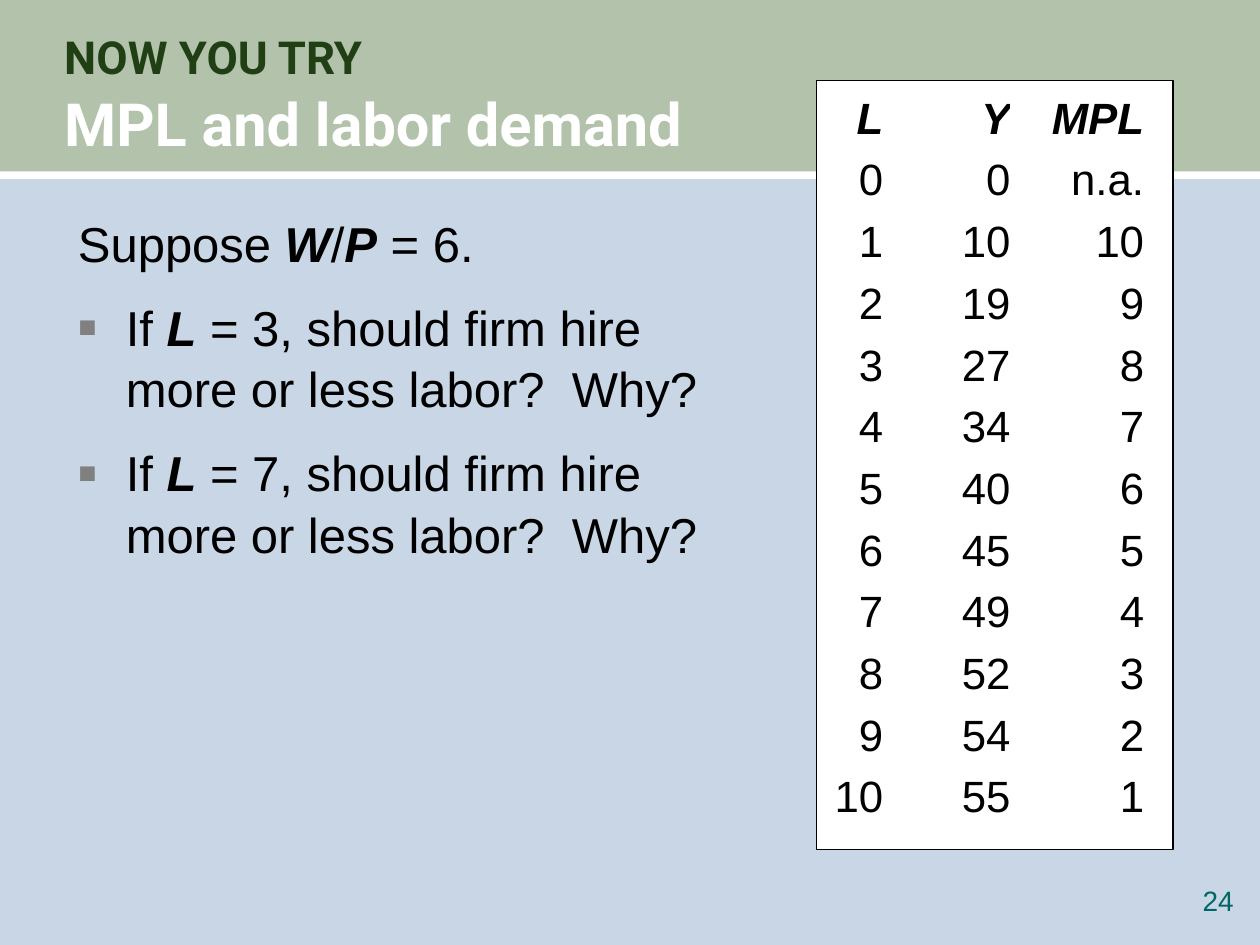
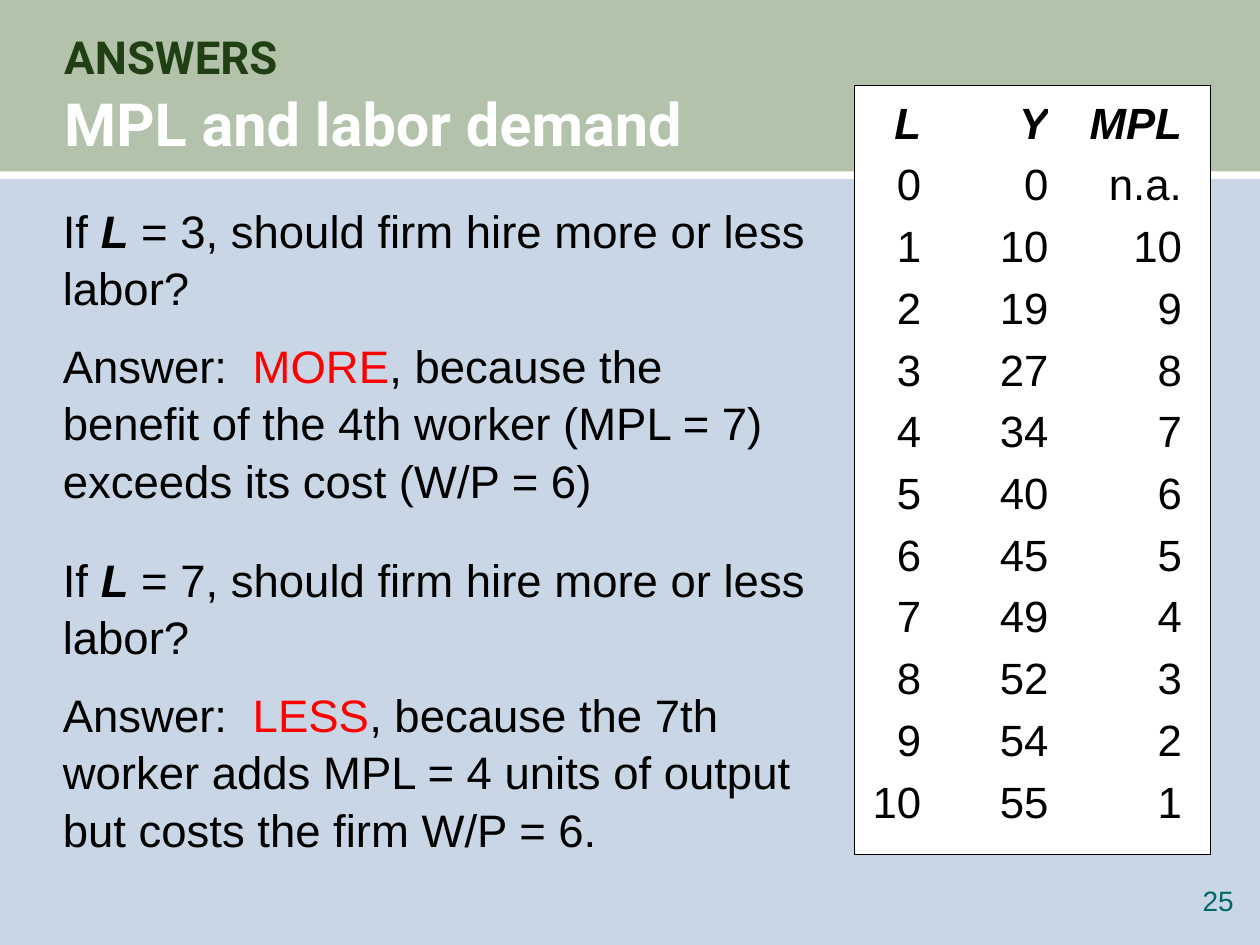
from dataclasses import dataclass

from lxml import etree
from pptx import Presentation
from pptx.dml.color import RGBColor
from pptx.enum.shapes import MSO_SHAPE
from pptx.enum.text import MSO_ANCHOR, PP_ALIGN
from pptx.oxml.ns import qn
from pptx.util import Inches, Pt

RECTANGLE = MSO_SHAPE.RECTANGLE
MIDDLE, TOP = MSO_ANCHOR.MIDDLE, MSO_ANCHOR.TOP
LEFT, RIGHT = PP_ALIGN.LEFT, PP_ALIGN.RIGHT
BLANK_LAYOUT = 6


@dataclass(frozen=True)
class Theme:
    background: str = "C9D6E5"
    band: str = "B3C2AA"
    white: str = "FFFFFF"
    text: str = "000000"
    kicker: str = "203F15"
    bullet: str = "808080"
    number: str = "006666"
    answer: str = "FF0000"
    title_font: str = "Roboto"
    body_font: str = "Arial"
    kicker_size: int = 26
    title_size: int = 34
    question_size: int = 28
    answer_size: int = 26
    table_size: int = 25
    number_size: int = 16
    line_spacing: float = 1.05
    paragraph_gap: float = 0.45  # share of the type size


THEME = Theme()

OUTPUT = [0, 10, 19, 27, 34, 40, 45, 49, 52, 54, 55]
MARGINAL = ["n.a."] + [after - before for before, after in zip(OUTPUT, OUTPUT[1:])]
LABOR_ROWS = [("L", "Y", "MPL"), *zip(range(len(OUTPUT)), OUTPUT, MARGINAL)]


def color(value):
    return RGBColor.from_string(value)


def add_span(para, text, size, font=THEME.body_font, fill=THEME.text,
             bold=False, italic=False):
    span = para.add_run()
    span.text = text
    span.font.name = font
    span.font.size = Pt(size)
    span.font.color.rgb = color(fill)
    span.font.bold = bold
    span.font.italic = italic


def symbol(text):
    """A span for a variable: bold italic."""
    return text, {"bold": True, "italic": True}


def plain(text, **style):
    return text, style


def add_bullet(para):
    """Give the paragraph a grey square and a hanging indent."""
    properties = para._p.get_or_add_pPr()
    indent = Inches(0.38)
    properties.set("marL", str(indent))
    properties.set("indent", str(-indent))
    tint = etree.SubElement(properties, qn("a:buClr"))
    etree.SubElement(tint, qn("a:srgbClr"), val=THEME.bullet)
    etree.SubElement(properties, qn("a:buSzPct"), val="120000")
    etree.SubElement(properties, qn("a:buFont"), typeface=THEME.body_font)
    etree.SubElement(properties, qn("a:buChar"), char="▪")


class LectureDeck:
    def __init__(self, theme):
        self.theme = theme
        self.deck = Presentation()
        self.deck.slide_width = Inches(10)
        self.deck.slide_height = Inches(7.5)
        self.page = None

    def add_page(self, kicker, title, number):
        """Start a slide with its band, two-line title and number."""
        theme = self.theme
        self.page = self.deck.slides.add_slide(self.deck.slide_layouts[BLANK_LAYOUT])
        self.page.background.fill.solid()
        self.page.background.fill.fore_color.rgb = color(theme.background)
        self.rectangle(0, -0.01, 10, 1.41, theme.band)
        self.rectangle(0, 1.36, 10, 0.06, theme.white)

        frame = self.text_frame(0.51, 0.22, 9.02, 1.03, inset=False, anchor=MIDDLE)
        para = frame.paragraphs[0]
        para.line_spacing = theme.line_spacing
        heading = {"font": theme.title_font, "bold": True}
        add_span(para, kicker, theme.kicker_size, fill=theme.kicker, **heading)
        para.add_line_break()
        add_span(para, title, theme.title_size, fill=theme.white, **heading)

        para = self.text_frame(9.24, 7.01, 0.55, 0.32, inset=False).paragraphs[0]
        para.alignment = RIGHT
        add_span(para, str(number), theme.number_size, fill=theme.number)

    def rectangle(self, left, top, width, height, fill, line=None):
        box = self.page.shapes.add_shape(
            RECTANGLE, Inches(left), Inches(top), Inches(width), Inches(height))
        box.shadow.inherit = False
        box.fill.solid()
        box.fill.fore_color.rgb = color(fill)
        if line:
            box.line.color.rgb = color(line)
            box.line.width = Pt(0.75)
        else:
            box.line.fill.background()

    def text_frame(self, left, top, width, height, inset=True, anchor=TOP):
        box = self.page.shapes.add_textbox(
            Inches(left), Inches(top), Inches(width), Inches(height))
        frame = box.text_frame
        frame.word_wrap = True
        frame.vertical_anchor = anchor
        if not inset:
            frame.margin_left = frame.margin_right = 0
            frame.margin_top = frame.margin_bottom = 0
        return frame

    def body(self, left, top, width, height, paragraphs, size, bulleted=(), gaps=None):
        """Write lists of spans; gaps maps a paragraph index to its own space before."""
        frame = self.text_frame(left, top, width, height)
        for index, spans in enumerate(paragraphs):
            para = frame.add_paragraph() if index else frame.paragraphs[0]
            para.alignment = LEFT
            para.line_spacing = self.theme.line_spacing
            usual_gap = size * self.theme.paragraph_gap
            para.space_before = Pt((gaps or {}).get(index, usual_gap))
            if index in bulleted:
                add_bullet(para)
            for text, style in spans:
                add_span(para, text, size, **style)

    def labor_table(self, left, top):
        """Draw the production schedule on a framed white panel."""
        theme = self.theme
        self.rectangle(left, top, 2.83, 6.1, theme.white, theme.text)
        widths, row_height = (0.48, 1.01, 1.06), 0.49
        table = self.page.shapes.add_table(
            len(LABOR_ROWS), len(widths), Inches(left + 0.05), Inches(top + 0.06),
            Inches(sum(widths)), Inches(row_height * len(LABOR_ROWS))).table
        table.first_row = table.horz_banding = False
        for column, width in zip(table.columns, widths):
            column.width = Inches(width)
        for row_index, values in enumerate(LABOR_ROWS):
            header = row_index == 0
            for column_index, value in enumerate(values):
                cell = table.cell(row_index, column_index)
                cell.fill.solid()
                cell.fill.fore_color.rgb = color(theme.white)
                cell.margin_left = cell.margin_right = 0
                cell.margin_top = cell.margin_bottom = 0
                cell.vertical_anchor = MIDDLE
                para = cell.text_frame.paragraphs[0]
                para.alignment = RIGHT
                add_span(para, str(value), theme.table_size, bold=header, italic=header)


def labor_question(level, ending=""):
    return [plain("If "), symbol("L"),
            plain(f" = {level}, should firm hire more or less labor?{ending}")]


def labor_answer(verdict, reason):
    return [plain("Answer:  "), plain(verdict, fill=THEME.answer),
            plain(f", because the {reason}")]


def main():
    lecture = LectureDeck(THEME)
    title = "MPL and labor demand"

    lecture.add_page("NOW YOU TRY", title, 24)
    premise = [plain("Suppose "), symbol("W"), plain("/"), symbol("P"), plain(" = 6.")]
    questions = [labor_question(level, "  Why?") for level in (3, 7)]
    lecture.body(0.52, 1.62, 5.62, 5.08, [premise, *questions],
                 THEME.question_size, bulleted=(1, 2))
    lecture.labor_table(6.48, 0.64)

    lecture.add_page("ANSWERS", title, 25)
    answers = [
        labor_question(3),
        labor_answer("MORE", "benefit of the 4th worker (MPL = 7) "
                             "exceeds its cost (W/P = 6)"),
        labor_question(7),
        labor_answer("LESS", "7th worker adds MPL = 4 units of output "
                             "but costs the firm W/P = 6."),
    ]
    lecture.body(0.4, 1.54, 6.11, 5.76, answers, THEME.answer_size, gaps={2: 24})
    lecture.labor_table(6.78, 0.68)

    lecture.deck.save("out.pptx")


if __name__ == "__main__":
    main()
